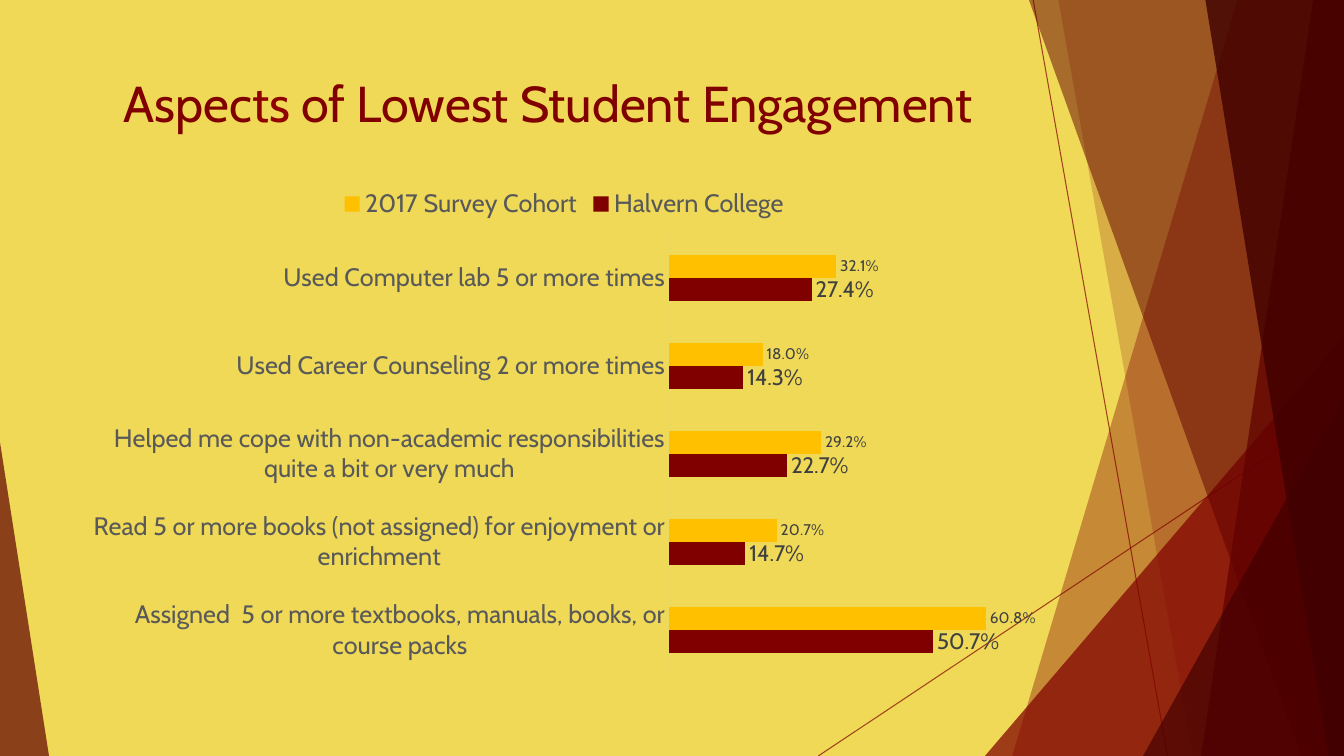
from dataclasses import dataclass

from lxml import etree
from pptx import Presentation
from pptx import util as u
from pptx.chart.data import CategoryChartData
from pptx.dml.color import RGBColor
from pptx.enum import chart as ch, shapes, text
from pptx.oxml import parse_xml
from pptx.oxml.ns import nsdecls, qn

FONT = "Cabin"
W, H = 960, 540
COLORS = {
    "sand": "EFD957", "maroon": "800000", "title_accent": "900000",
    "wine": "600000", "dark": "400000", "gold": "FFC000",
    "axis_text": "595959", "label_text": "404040", "axis_line": "D9D9D9",
}


@dataclass
class Ray:
    start: tuple[float, float]
    end: tuple[float, float]


@dataclass
class Band:
    """Four-sided facet that fills the slide height and ends at its right edge."""
    top_x: float
    bottom_x: float
    color: str
    alpha: int


@dataclass
class Corner:
    """Right triangle standing on the bottom edge; apex 0 is left, 1 is right."""
    left: float
    top: float
    width: float
    apex: int
    color: str
    alpha: int


@dataclass
class Series:
    name: str
    values: tuple[float, ...]
    color: str
    label_size: int


RAYS = [Ray((738, 0), (834, H)), Ray((W, 290), (584.5, H))]
FACETS = [
    Band(884, 723, "maroon", 36),
    Band(756, 852, "maroon", 20),
    Corner(703.5, 240, 256.5, 1, "maroon", 72),
    Band(735, 929.5, "wine", 50),
    Band(938, 858, "wine", 70),
    Band(861, 949, "dark", 80),
    Corner(816.5, 283, 143.5, 1, "dark", 66),
    Corner(0, 316, 35, 0, "wine", 70),
]
TITLE = [("Aspec", "maroon"), ("ts", "title_accent"),
         (" of Lowest Student Engagement", "maroon")]
CATEGORIES = [
    "Assigned  5 or more textbooks, manuals, books, or course packs",
    "Read 5 or more books (not assigned) for enjoyment or enrichment",
    "Helped me cope with non-academic responsibilities quite a bit or very much",
    "Used Career Counseling 2 or more times",
    "Used Computer lab 5 or more times",
]
SERIES = [
    Series("Halvern College", (0.507, 0.147, 0.227, 0.143, 0.274), "maroon", 16),
    Series("2017 Survey Cohort", (0.608, 0.207, 0.292, 0.18, 0.321), "gold", 11),
]
PLOT_LAYOUT = {"x": 0.607, "y": 0.113, "w": 0.373, "h": 0.866}


def rgb(name: str) -> RGBColor:
    return RGBColor.from_string(COLORS[name])


def set_alpha(element, percent: int) -> None:
    color = next(element.iter(qn("a:srgbClr")))
    etree.SubElement(color, qn("a:alpha")).set("val", str(percent * 1000))


def style_font(font, size: float, color: str) -> None:
    font.name = FONT
    font.size = u.Pt(size)
    font.bold = False
    font.color.rgb = rgb(color)


def draw_ray(slide, ray: Ray) -> None:
    points = [u.Pt(v) for v in ray.start + ray.end]
    line = slide.shapes.add_connector(shapes.MSO_CONNECTOR.STRAIGHT, *points)
    line.line.width = u.Pt(0.75)
    line.line.color.rgb = rgb("maroon")
    props = line._element.spPr
    set_alpha(props, 70)
    etree.SubElement(props, qn("a:effectLst"))


def draw_facet(slide, facet: Band | Corner) -> None:
    if isinstance(facet, Band):
        builder = slide.shapes.build_freeform(u.Pt(facet.top_x), 0, scale=1.0)
        corners = [(W, 0), (W, H), (facet.bottom_x, H)]
        builder.add_line_segments([(u.Pt(x), u.Pt(y)) for x, y in corners])
        sp = builder.convert_to_shape()
    else:
        sp = slide.shapes.add_shape(
            shapes.MSO_SHAPE.ISOSCELES_TRIANGLE, u.Pt(facet.left), u.Pt(facet.top),
            u.Pt(facet.width), u.Pt(H - facet.top))
        sp.adjustments[0] = facet.apex
    sp.shadow.inherit = False
    sp.fill.solid()
    sp.fill.fore_color.rgb = rgb(facet.color)
    set_alpha(sp._element.spPr, facet.alpha)
    sp.line.fill.background()


def draw_title(slide) -> None:
    box = slide.shapes.add_textbox(u.Pt(53), u.Pt(48), u.Pt(677), u.Pt(78))
    tf = box.text_frame
    tf.word_wrap = True
    tf.vertical_anchor = text.MSO_ANCHOR.TOP
    p = tf.paragraphs[0]
    p.alignment = text.PP_ALIGN.CENTER
    for words, color in TITLE:
        r = p.add_run()
        r.text = words
        style_font(r.font, 36, color)


def place_plot(chart) -> None:
    """Fix the inner plot area as fractions of the chart."""
    modes = "".join(f'<c:{k}Mode val="edge"/>' for k in "xy")
    sizes = "".join(f'<c:{k} val="{v}"/>' for k, v in PLOT_LAYOUT.items())
    layout = parse_xml(
        f'<c:layout {nsdecls("c")}><c:manualLayout><c:layoutTarget val="inner"/>'
        f"{modes}{sizes}</c:manualLayout></c:layout>")
    plot_area = chart._chartSpace.chart.plotArea
    for old in plot_area.findall(qn("c:layout")):
        plot_area.remove(old)
    plot_area.insert(0, layout)


def draw_chart(slide) -> None:
    data = CategoryChartData(number_format="0.0%")
    data.categories = CATEGORIES
    for series in SERIES:
        data.add_series(series.name, series.values)
    chart = slide.shapes.add_chart(
        ch.XL_CHART_TYPE.BAR_CLUSTERED, u.Pt(53.5), u.Pt(126), u.Pt(699), u.Pt(363),
        data).chart
    chart.has_title = False
    style_font(chart.font, 10, "label_text")
    chart.has_legend = True
    chart.legend.position = ch.XL_LEGEND_POSITION.TOP
    chart.legend.include_in_layout = False
    style_font(chart.legend.font, 18, "axis_text")

    cat_axis, val_axis = chart.category_axis, chart.value_axis
    cat_axis.major_tick_mark = ch.XL_TICK_MARK.NONE
    style_font(cat_axis.tick_labels.font, 18, "axis_text")
    cat_axis.format.line.color.rgb = rgb("axis_line")
    cat_axis.format.line.width = u.Pt(0.75)
    set_alpha(cat_axis._element.find(qn("c:spPr")), 15)
    val_axis.has_major_gridlines = False
    val_axis.minimum_scale, val_axis.maximum_scale = 0, 0.7
    val_axis.visible = False

    plot = chart.plots[0]
    plot.gap_width = 182
    plot.overlap = 0
    plot.vary_by_categories = False
    for bars, series in zip(plot.series, SERIES):
        bars.format.fill.solid()
        bars.format.fill.fore_color.rgb = rgb(series.color)
        labels = bars.data_labels
        labels.show_value = True
        labels.number_format = "0.0%"
        labels.number_format_is_linked = False
        labels.position = ch.XL_LABEL_POSITION.OUTSIDE_END
        style_font(labels.font, series.label_size, "label_text")
    place_plot(chart)


def main() -> None:
    prs = Presentation()
    prs.slide_width, prs.slide_height = u.Pt(W), u.Pt(H)
    slide = prs.slides.add_slide(prs.slide_layouts[6])
    slide.background.fill.solid()
    slide.background.fill.fore_color.rgb = rgb("sand")
    for ray in RAYS:
        draw_ray(slide, ray)
    for facet in FACETS:
        draw_facet(slide, facet)
    draw_title(slide)
    draw_chart(slide)
    prs.save("out.pptx")


if __name__ == "__main__":
    main()
